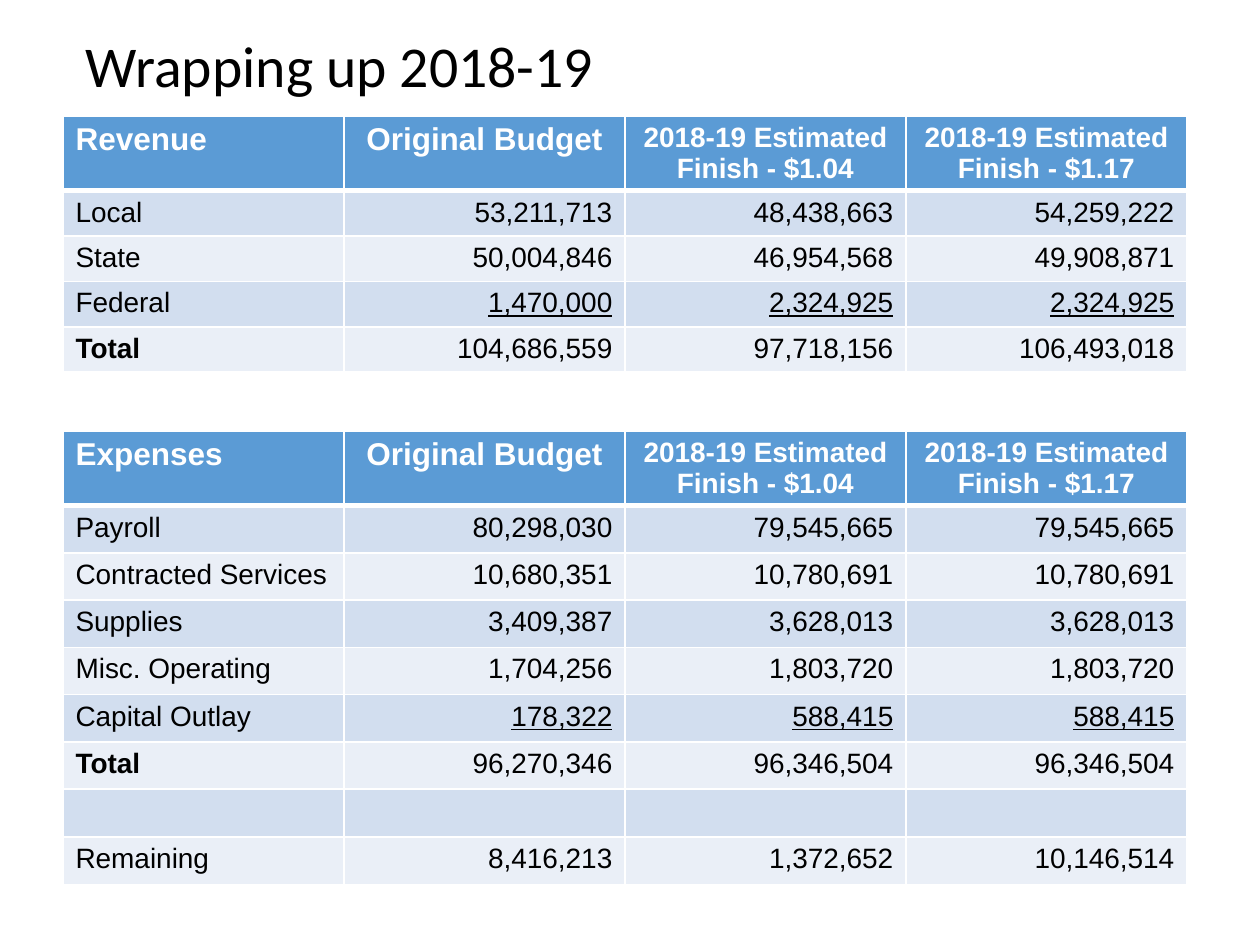
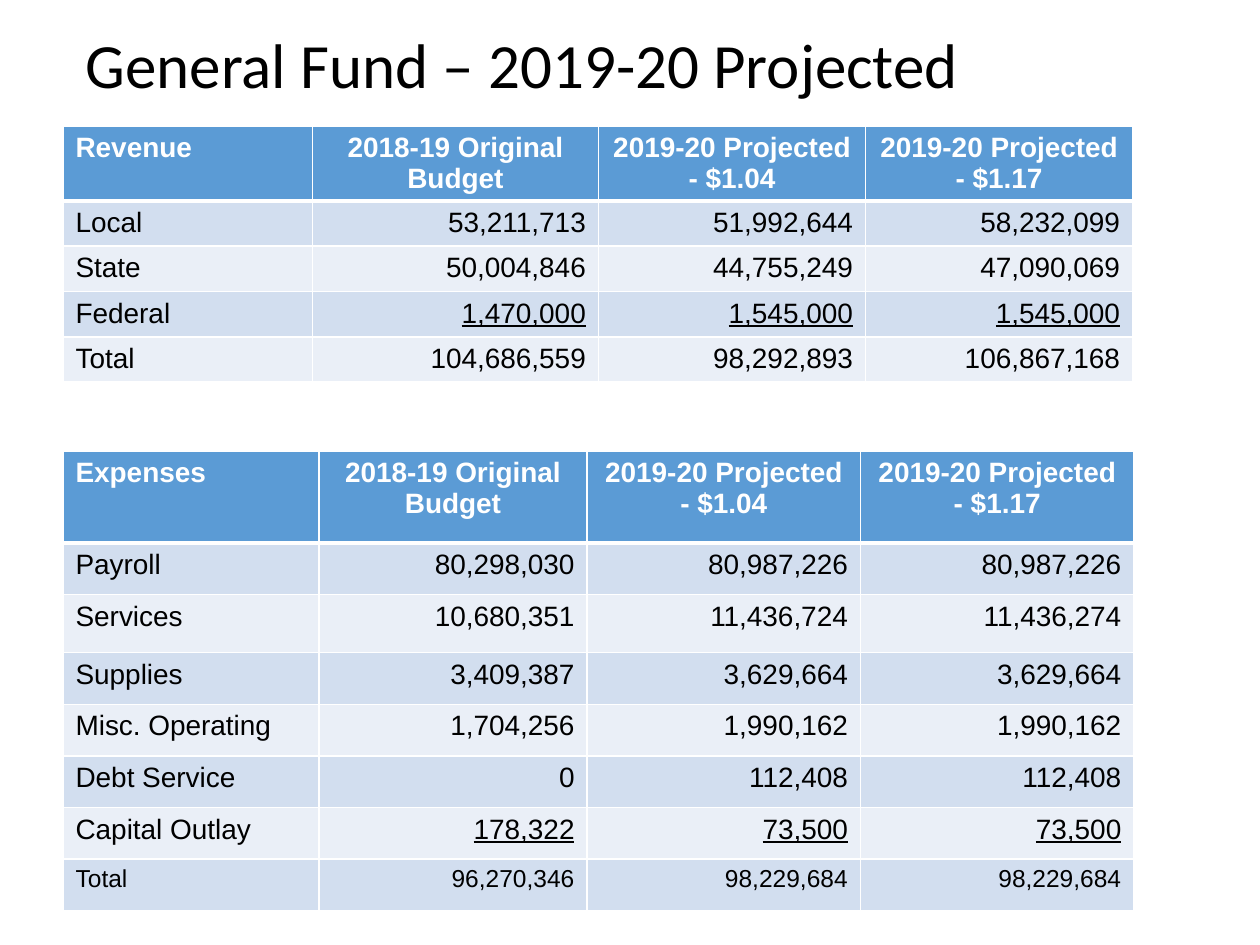
import pptx
import pptx.dml.color
import pptx.enum.text
import pptx.oxml
import pptx.oxml.ns
import pptx.util

Inches = pptx.util.Inches
Pt = pptx.util.Pt
RGBColor = pptx.dml.color.RGBColor
ALIGN = pptx.enum.text.PP_ALIGN

WHITE = RGBColor(0xFF, 0xFF, 0xFF)
BLACK = RGBColor(0x00, 0x00, 0x00)
HEADER_BLUE = RGBColor(0x5B, 0x9B, 0xD5)
BANDS = (RGBColor(0xD2, 0xDE, 0xEF), RGBColor(0xEA, 0xEF, 0xF7))

TABLE_LEFT = 0.5
TITLE_LEFT, TITLE_WIDTH = 0.58, 8.95

FINISH_HEADINGS = ("Original Budget", "2018-19 Estimated Finish - $1.04",
                   "2018-19 Estimated Finish - $1.17")
PROJECTED_HEADINGS = ("2018-19 Original Budget", "2019-20 Projected - $1.04",
                      "2019-20 Projected - $1.17")

SLIDES = [
    {
        "title": "Wrapping up 2018-19", "title_size": 33, "title_top": 0.17, "title_height": 0.75,
        "header_sizes": (18, 18, 16, 16), "bold_total": True,
        "tables": [
            {
                "top": 0.92, "columns": [2.23] * 4, "heights": [0.58] + [0.36] * 4, "total_size": 16,
                "rows": [
                    ("Revenue", *FINISH_HEADINGS),
                    ("Local", "53,211,713", "48,438,663", "54,259,222"),
                    ("State", "50,004,846", "46,954,568", "49,908,871"),
                    ("Federal", "1,470,000", "2,324,925", "2,324,925"),
                    ("Total", "104,686,559", "97,718,156", "106,493,018"),
                ],
            },
            {
                "top": 3.42, "columns": [2.23] * 4, "heights": [0.58] + [0.375] * 8, "total_size": 16,
                "rows": [
                    ("Expenses", *FINISH_HEADINGS),
                    ("Payroll", "80,298,030", "79,545,665", "79,545,665"),
                    ("Contracted Services", "10,680,351", "10,780,691", "10,780,691"),
                    ("Supplies", "3,409,387", "3,628,013", "3,628,013"),
                    ("Misc. Operating", "1,704,256", "1,803,720", "1,803,720"),
                    ("Capital Outlay", "178,322", "588,415", "588,415"),
                    ("Total", "96,270,346", "96,346,504", "96,346,504"),
                    ("", "", "", ""),
                    ("Remaining", "8,416,213", "1,372,652", "10,146,514"),
                ],
            },
        ],
    },
    {
        "title": "General Fund – 2019-20 Projected", "title_size": 36, "title_top": 0.08, "title_height": 0.92,
        "header_sizes": (16, 16, 16, 16), "bold_total": False,
        "tables": [
            {
                "top": 1, "columns": [1.98, 2.27, 2.12, 2.12], "heights": [0.59] + [0.36] * 4, "total_size": 16,
                "rows": [
                    ("Revenue", *PROJECTED_HEADINGS),
                    ("Local", "53,211,713", "51,992,644", "58,232,099"),
                    ("State", "50,004,846", "44,755,249", "47,090,069"),
                    ("Federal", "1,470,000", "1,545,000", "1,545,000"),
                    ("Total", "104,686,559", "98,292,893", "106,867,168"),
                ],
            },
            {
                "top": 3.58, "columns": [2.03, 2.13, 2.17, 2.17], "total_size": 14,
                "heights": [0.73, 0.41, 0.46] + [0.41] * 5,
                "rows": [
                    ("Expenses", *PROJECTED_HEADINGS),
                    ("Payroll", "80,298,030", "80,987,226", "80,987,226"),
                    ("Services", "10,680,351", "11,436,724", "11,436,274"),
                    ("Supplies", "3,409,387", "3,629,664", "3,629,664"),
                    ("Misc. Operating", "1,704,256", "1,990,162", "1,990,162"),
                    ("Debt Service", "0", "112,408", "112,408"),
                    ("Capital Outlay", "178,322", "73,500", "73,500"),
                    ("Total", "96,270,346", "98,229,684", "98,229,684"),
                ],
            },
        ],
    },
]


def set_borders(cell, top, bottom):
    """Draw white borders: 1 pt at the sides, the given points above and below."""
    properties = cell._tc.get_or_add_tcPr()
    for side, width in (("L", 1), ("R", 1), ("T", top), ("B", bottom)):
        properties.append(pptx.oxml.parse_xml(
            f'<a:ln{side} {pptx.oxml.ns.nsdecls("a")} w="{Pt(width)}"><a:solidFill>'
            f'<a:srgbClr val="{WHITE}"/></a:solidFill></a:ln{side}>'))


def write(paragraph, text, color, format_values):
    run = paragraph.add_run()
    run.text = text
    run.font.color.rgb = color
    for name, value in format_values.items():
        setattr(run.font, name, value)


presentation = pptx.Presentation()
presentation.slide_width = Inches(10)
presentation.slide_height = Inches(7.5)

for content in SLIDES:
    slide = presentation.slides.add_slide(presentation.slide_layouts[5])

    title = slide.shapes.title
    title.left, title.width = Inches(TITLE_LEFT), Inches(TITLE_WIDTH)
    title.top, title.height = Inches(content["title_top"]), Inches(content["title_height"])
    title.text_frame.auto_size = pptx.enum.text.MSO_AUTO_SIZE.NONE
    title.text_frame.vertical_anchor = pptx.enum.text.MSO_ANCHOR.MIDDLE
    paragraph = title.text_frame.paragraphs[0]
    paragraph.alignment = ALIGN.LEFT
    paragraph.line_spacing = 0.9
    write(paragraph, content["title"], BLACK, {"name": "Calibri", "size": Pt(content["title_size"])})

    for budget in content["tables"]:
        rows = budget["rows"]
        table = slide.shapes.add_table(
            len(rows), len(budget["columns"]), Inches(TABLE_LEFT), Inches(budget["top"]),
            Inches(sum(budget["columns"])), Inches(sum(budget["heights"]))).table
        table.horz_banding = False
        for column, width in zip(table.columns, budget["columns"]):
            column.width = Inches(width)
        for row, height in zip(table.rows, budget["heights"]):
            row.height = Inches(height)

        total_row = [row[0] for row in rows].index("Total")
        for row_index, row in enumerate(rows):
            is_header = row_index == 0
            is_total = row_index == total_row
            for column_index, text in enumerate(row):
                is_label = column_index == 0
                cell = table.cell(row_index, column_index)
                set_borders(cell, 3 if row_index == 1 else 1, 3 if is_header else 1)
                cell.fill.solid()
                cell.fill.fore_color.rgb = HEADER_BLUE if is_header else BANDS[(row_index - 1) % 2]

                if is_header:
                    size = content["header_sizes"][column_index]
                else:
                    size = budget["total_size"] if is_total else 16
                paragraph = cell.text_frame.paragraphs[0]
                if not is_label:
                    paragraph.alignment = ALIGN.CENTER if is_header else ALIGN.RIGHT
                write(paragraph, text, WHITE if is_header else BLACK, {
                    "name": "Arial",
                    "size": Pt(size),
                    "bold": is_header or (is_total and is_label and content["bold_total"]),
                    "underline": row_index == total_row - 1 and not is_label,
                })

presentation.save("out.pptx")
